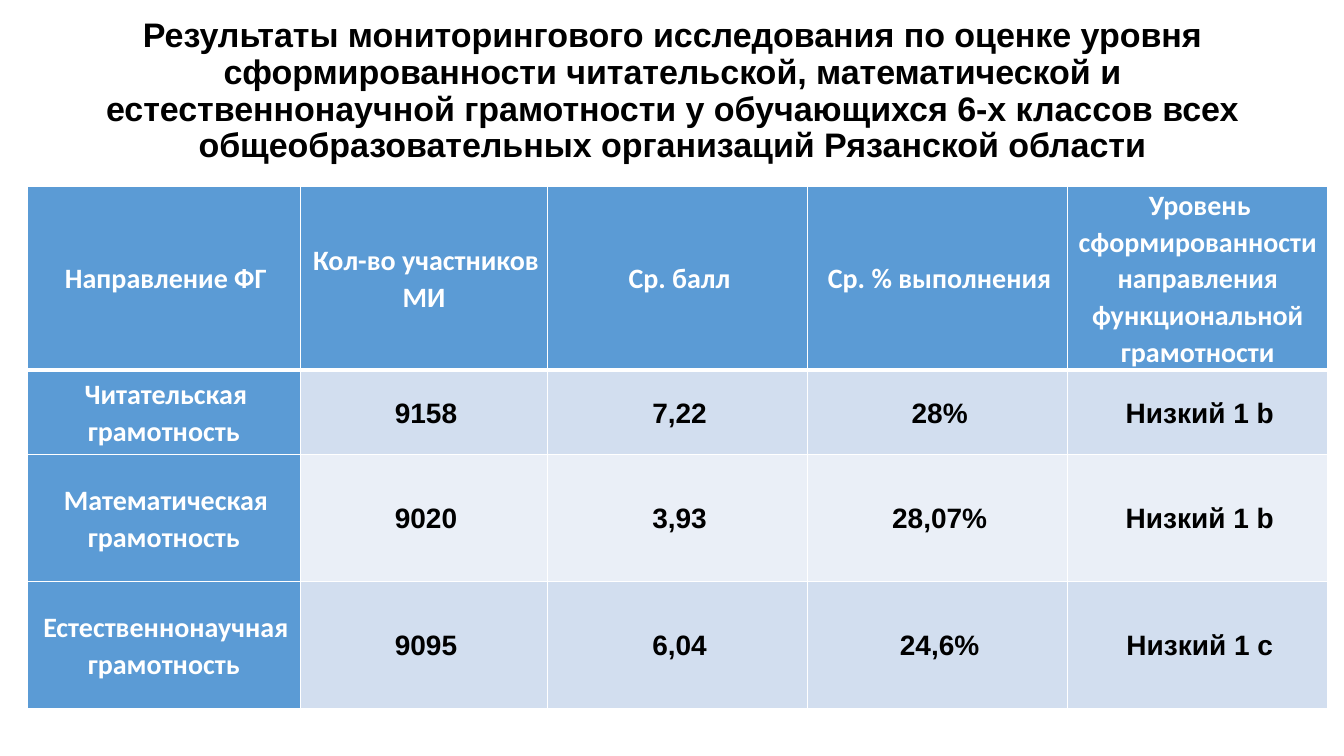
from lxml.etree import SubElement
from pptx import Presentation
from pptx.dml.color import RGBColor
from pptx.enum.text import MSO_ANCHOR, MSO_AUTO_SIZE, PP_ALIGN
from pptx.oxml.ns import qn
from pptx.util import Pt

EMU_PER_PX = 9144
COLORS = {
    "white": "FFFFFF",
    "black": "000000",
    "header": "5B9BD5",
    "band_dark": "D2DEEF",
    "band_light": "EAEFF7",
}
TITLE = (
    "Результаты мониторингового исследования по оценке уровня "
    "сформированности читательской, математической и естественнонаучной "
    "грамотности у обучающихся 6-х классов всех общеобразовательных "
    "организаций Рязанской области"
)
ROWS = [
    ["Направление ФГ", "Кол-во участников МИ", "Ср. балл", "Ср. % выполнения",
     "Уровень сформированности направления функциональной грамотности"],
    ["Читательская грамотность", "9158", "7,22", "28%", "Низкий 1 b"],
    ["Математическая грамотность", "9020", "3,93", "28,07%", "Низкий 1 b"],
    ["Естественнонаучная грамотность", "9095", "6,04", "24,6%", "Низкий 1 с"],
]
COLUMN_WIDTHS = [271, 245, 258, 258, 258]
ROW_HEIGHTS = [141, 84, 126, 126]


def px(length):
    return length * EMU_PER_PX


class SlideBuilder:
    """Adds styled elements to the current slide."""

    def __init__(self, presentation):
        self.slide = presentation.slides.add_slide(presentation.slide_layouts[5])

    def format_paragraph(self, paragraph, font_name, size, color, spacing):
        paragraph.alignment = PP_ALIGN.CENTER
        paragraph.line_spacing = spacing
        font = paragraph.font
        font.name, font.size, font.bold = font_name, Pt(size), True
        font.color.rgb = RGBColor.from_string(COLORS[color])

    def add_title(self, text, left, top, width, height):
        title = self.slide.shapes.title
        title.left, title.top, title.width, title.height = map(
            px, (left, top, width, height))
        frame = title.text_frame
        frame.text = text
        frame.word_wrap = True
        frame.auto_size = MSO_AUTO_SIZE.NONE
        frame.vertical_anchor = MSO_ANCHOR.MIDDLE
        frame.margin_top, frame.margin_bottom = 0, px(43)
        self.format_paragraph(frame.paragraphs[0], "Arial", 24.3, "black", 0.9)

    def add_borders(self, cell, top_width, bottom_width):
        properties = cell._tc.get_or_add_tcPr()
        widths = {"lnL": 1, "lnR": 1, "lnT": top_width, "lnB": bottom_width}
        for position, (side, width) in enumerate(widths.items()):
            line = SubElement(properties, qn(f"a:{side}"), w=str(Pt(width)))
            fill = SubElement(line, qn("a:solidFill"))
            SubElement(fill, qn("a:srgbClr"), val=COLORS["white"])
            properties.insert(position, line)

    def format_cell(self, cell, text, row, column):
        is_header = row == 0 or column == 0
        band = "band_dark" if row % 2 else "band_light"
        cell.text = text
        cell.vertical_anchor = MSO_ANCHOR.MIDDLE
        cell.margin_left = cell.margin_right = px(7)
        cell.margin_top = cell.margin_bottom = 0
        cell.fill.solid()
        cell.fill.fore_color.rgb = RGBColor.from_string(
            COLORS["header" if is_header else band])
        paragraph = cell.text_frame.paragraphs[0]
        self.format_paragraph(
            paragraph, "Calibri" if is_header else "Arial", 20,
            "white" if is_header else "black", 1.07)
        paragraph._p.get_or_add_pPr().set("indent", str(px(4)))
        self.add_borders(cell, 3 if row == 1 else 1, 3 if row == 0 else 1)

    def add_table(self, rows, left, top, height, column_widths, row_heights):
        shape = self.slide.shapes.add_table(
            len(rows), len(column_widths), px(left), px(top),
            px(sum(column_widths)), px(height))
        table = shape.table
        for column, width in zip(table.columns, column_widths):
            column.width = px(width)
        for table_row, row_height in zip(table.rows, row_heights):
            table_row.height = px(row_height)
        shape.height = px(height)
        for row, texts in enumerate(rows):
            for column, text in enumerate(texts):
                self.format_cell(table.cell(row, column), text, row, column)


def main():
    presentation = Presentation()
    presentation.slide_width, presentation.slide_height = px(1333), px(750)
    builder = SlideBuilder(presentation)
    builder.add_title(TITLE, 92, 40, 1150, 145)
    builder.add_table(ROWS, 27, 185, 514, COLUMN_WIDTHS, ROW_HEIGHTS)
    presentation.save("out.pptx")


if __name__ == "__main__":
    main()
